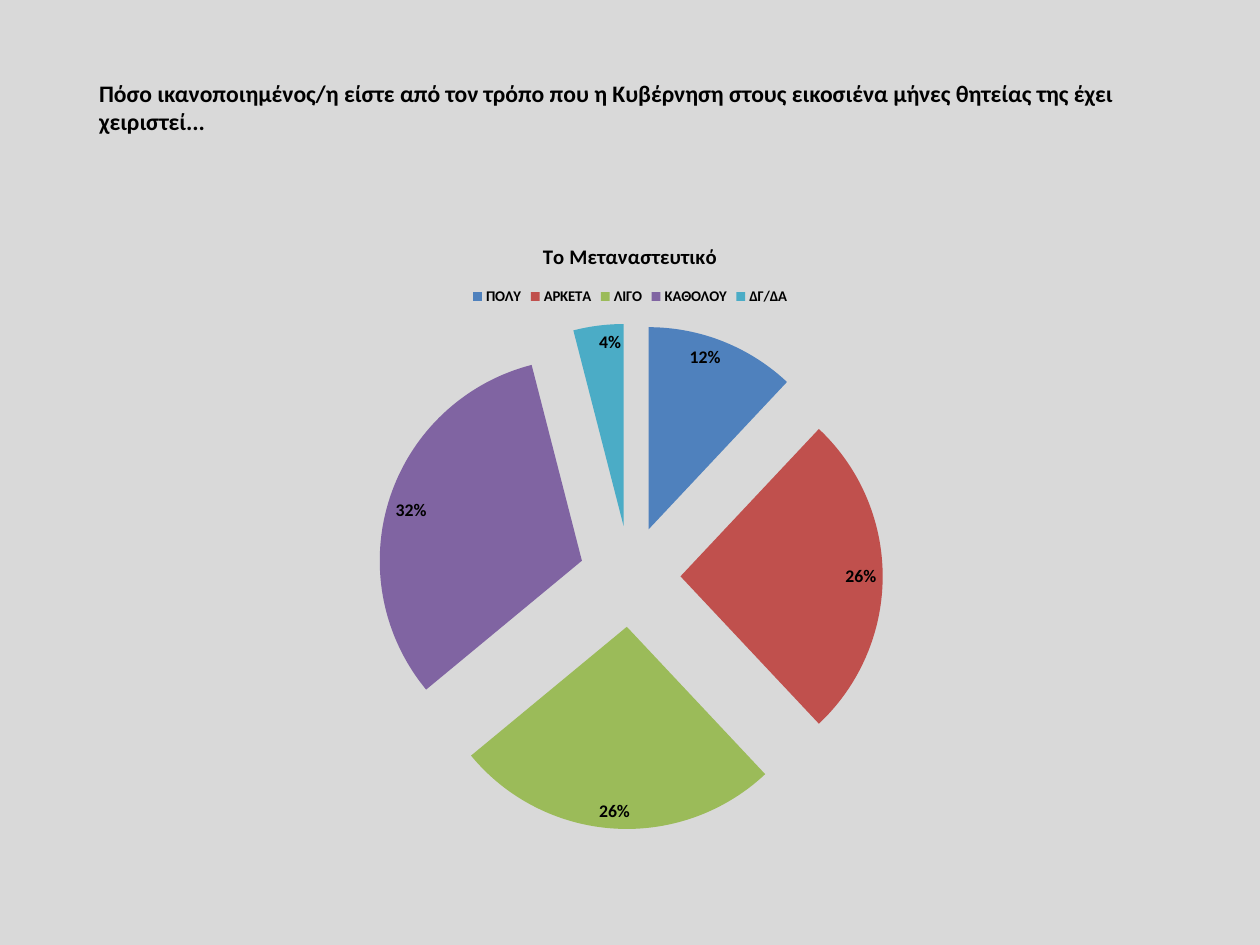
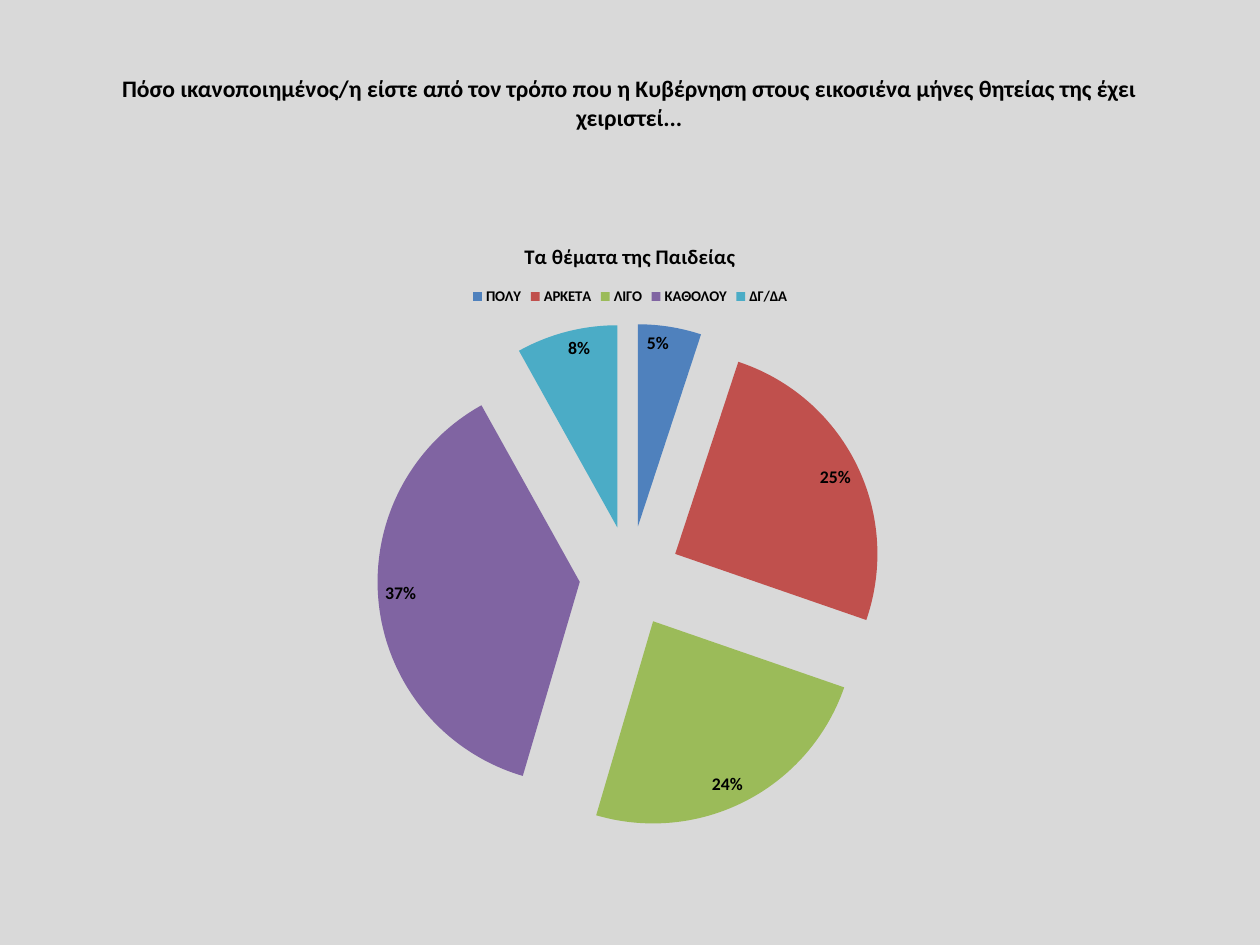
from lxml.etree import QName
from pptx import Presentation
from pptx.chart.data import CategoryChartData
from pptx.dml.color import RGBColor
from pptx.enum.chart import XL_CHART_TYPE, XL_LABEL_POSITION, XL_LEGEND_POSITION
from pptx.enum.text import MSO_ANCHOR, MSO_AUTO_SIZE, PP_ALIGN
from pptx.oxml import parse_xml
from pptx.util import Inches, Pt

COLOURS = {"page": "D9D9D9", "text": "000000"}
ANSWERS = {
    "ΠΟΛΥ": "4F81BD",
    "ΑΡΚΕΤΑ": "C0504D",
    "ΛΙΓΟ": "9BBB59",
    "ΚΑΘΟΛΟΥ": "8064A2",
    "ΔΓ/ΔΑ": "4BACC6",
}
QUESTION = (
    "Πόσο ικανοποιημένος/η είστε από τον τρόπο που η Κυβέρνηση "
    "στους εικοσιένα μήνες θητείας της έχει χειριστεί..."
)
# Topic, shares of the answers, title alignment, title height in rows
SURVEY = [
    ("Το Μεταναστευτικό", (12, 26, 26, 32, 4), PP_ALIGN.LEFT, 12.05),
    ("Τα θέματα της Παιδείας", (5, 25, 24, 37, 8), PP_ALIGN.CENTER, 11.15),
]


def colour(value):
    return RGBColor.from_string(value)


def apply(target, values):
    for name, value in values.items():
        setattr(target, name, value)


class SurveyDeck:
    """Holds the shared style and the current page, on a 100 by 100 grid."""

    font = "Calibri"
    explosion = 25

    def __init__(self):
        self.deck = Presentation()
        apply(self.deck, {"slide_width": Inches(11.84), "slide_height": Inches(8.88)})
        fill = self.deck.slide_master.background.fill
        fill.solid()
        fill.fore_color.rgb = colour(COLOURS["page"])
        self.page = None

    def add_page(self):
        self.page = self.deck.slides.add_slide(self.deck.slide_layouts[5])

    def place(self, left, top, width, height):
        column, row = self.deck.slide_width / 100, self.deck.slide_height / 100
        return {
            "left": round(left * column),
            "top": round(top * row),
            "width": round(width * column),
            "height": round(height * row),
        }

    def style(self, font, size, bold):
        apply(font, {"name": self.font, "size": Pt(size), "bold": bold})
        font.color.rgb = colour(COLOURS["text"])

    def title(self, text, align, rows):
        box = self.page.shapes.title
        apply(box, self.place(6.85, 5.3, 86.2, rows))
        frame = box.text_frame
        apply(frame, {
            "word_wrap": True,
            "auto_size": MSO_AUTO_SIZE.NONE,
            "vertical_anchor": MSO_ANCHOR.MIDDLE,
            "margin_left": Inches(0.12),
            "margin_right": Inches(0.12),
            "margin_top": Inches(0.06),
            "margin_bottom": Inches(0.06),
        })
        para = frame.paragraphs[0]
        para.alignment = align
        span = para.add_run()
        span.text = text
        self.style(span.font, 16, True)

    def pie(self, topic, values):
        data = CategoryChartData()
        data.categories = list(ANSWERS)
        data.add_series(topic, values)
        area = self.place(5, 23.3, 90, 66)
        chart = self.page.shapes.add_chart(
            XL_CHART_TYPE.PIE, area["left"], area["top"],
            area["width"], area["height"], data,
        ).chart
        self.style(chart.font, 10, False)

        # Chart title and legend
        chart.has_title = True
        para = chart.chart_title.text_frame.paragraphs[0]
        span = para.add_run()
        span.text = topic
        self.style(span.font, 14, True)
        chart.has_legend = True
        apply(chart.legend, {
            "position": XL_LEGEND_POSITION.TOP,
            "include_in_layout": False,
        })
        self.style(chart.legend.font, 10, True)

        # Slices, pulled apart
        plot = chart.plots[0]
        plot.vary_by_categories = True
        series = plot.series[0]
        for index, value in enumerate(ANSWERS.values()):
            fill = series.points[index].format.fill
            fill.solid()
            fill.fore_color.rgb = colour(value)
        element = series._element
        namespace = QName(element).namespace
        first_point = element.find(f"{{{namespace}}}dPt")
        first_point.addprevious(parse_xml(
            f'<c:explosion xmlns:c="{namespace}" val="{self.explosion}"/>'
        ))

        # Percentage labels
        plot.has_data_labels = True
        labels = plot.data_labels
        apply(labels, {
            "show_percentage": True,
            "show_value": False,
            "number_format": "0%",
            "number_format_is_linked": False,
            "position": XL_LABEL_POSITION.INSIDE_END,
        })
        self.style(labels.font, 12, True)


def main():
    survey = SurveyDeck()
    for topic, values, align, rows in SURVEY:
        survey.add_page()
        survey.title(QUESTION, align, rows)
        survey.pie(topic, values)
    survey.deck.save("out.pptx")


if __name__ == "__main__":
    main()
